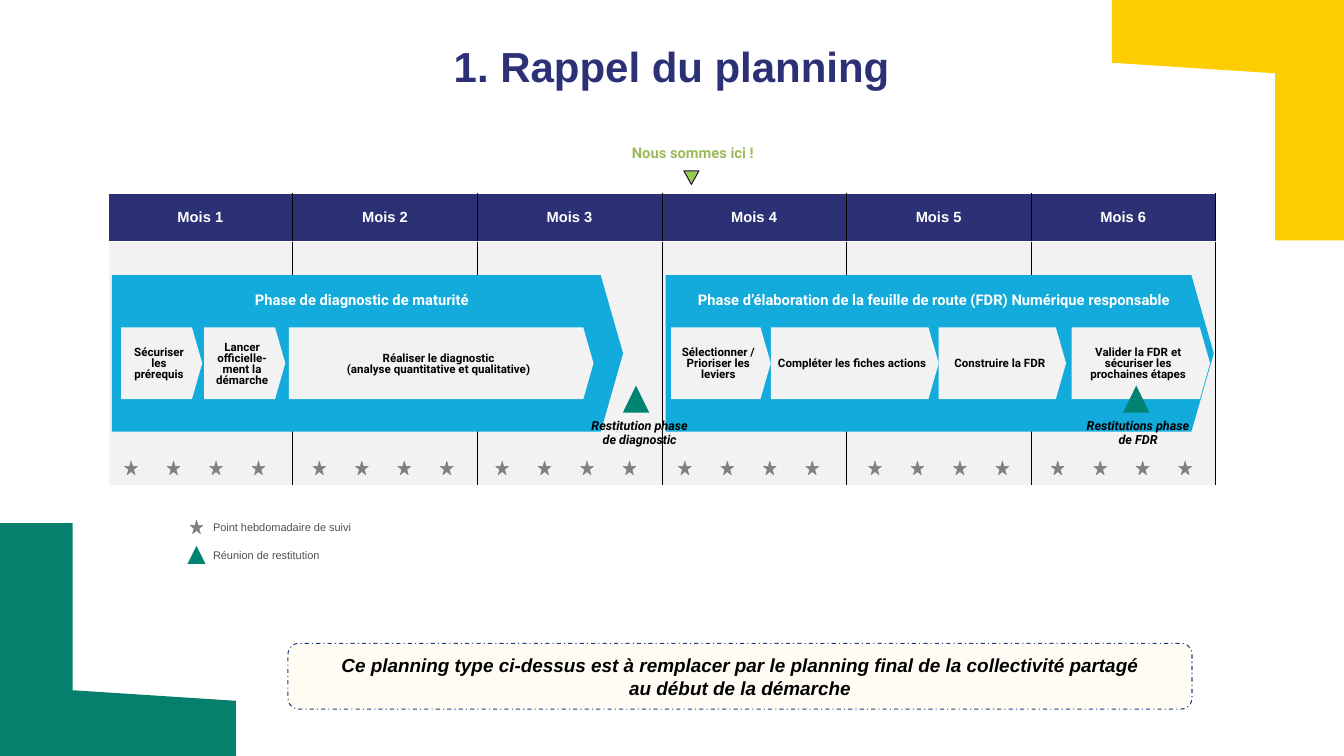
"""Build the planning slide: six months, two phases, weekly points and feedback meetings."""
from lxml.etree import SubElement
from pptx import Presentation
from pptx.dml.color import RGBColor
from pptx.enum.dml import MSO_LINE
from pptx.enum.shapes import MSO_SHAPE as Shp
from pptx.enum.text import MSO_ANCHOR as Anchor, PP_ALIGN as Align
from pptx.oxml.ns import qn
from pptx.util import Inches, Pt

W, H = 17.78, 10
LEFT, TOP, MONTH = 1.43, 2.56, 2.442
HEAD_H, BODY_H = 0.63, 3.23
NAVY, BLUE, GREEN, GREY, PALE = "2C3176", "12ABDB", "008373", "808080", "F2F2F2"
WHITE, BLACK = "FFFFFF", "000000"

TITLE = "1. Rappel du planning"
HERE, HERE_AT = "Nous sommes ici !", 3.16
MONTHS = [f"Mois {n}" for n in range(1, 7)]
PHASES = [
    ("Phase de diagnostic de maturité", 0.02, 2.77),
    ("Phase d’élaboration de la feuille de route (FDR) Numérique responsable", 3.02, 2.97),
]
STEPS = [
    (["Sécuriser les prérequis"], 0.07, 0.44),
    (["Lancer officielle-ment la démarche"], 0.52, 0.44),
    (["Réaliser le diagnostic", "(analyse quantitative et qualitative)"], 0.98, 1.65),
    (["Sélectionner / Prioriser les leviers"], 3.05, 0.54),
    (["Compléter les fiches actions"], 3.59, 0.91),
    (["Construire la FDR"], 4.5, 0.69),
    (["Valider la FDR et sécuriser les prochaines étapes"], 5.22, 0.75),
]
MEETINGS = [
    (["Restitution phase", "de diagnostic"], 2.86, 2.88),
    (["Restitutions phase", "de FDR"], 5.57, 5.58),
]
WEEK_STARTS, WEEK = [0.09, 1.11, 2.1, 3.09, 4.12, 5.11], 0.23
LEGEND = [
    ("Point hebdomadaire de suivi", Shp.STAR_5_POINT, GREY, 0.17, 0.18, 6.97),
    ("Réunion de restitution", Shp.ISOSCELES_TRIANGLE, GREEN, 0.24, 0.24, 7.34),
]
NOTE = ["Ce planning type ci-dessus est à remplacer par le planning final de la collectivité partagé",
        "au début de la démarche"]
CORNERS = [
    ("FCCD00", [(W, 0), (14.71, 0), (14.71, 0.83), (16.87, 0.97), (16.87, 3.18), (W, 3.18)]),
    ("06806C", [(0.96, 6.92), (0, 6.92), (0, H), (3.12, H), (3.12, 9.27), (0.96, 9.13)]),
]


def rgb(color):
    """Turn a hex string into a colour."""
    return RGBColor.from_string(color)


def month_x(m):
    """Return the horizontal place of a point given in months."""
    return LEFT + m * MONTH


def paint(s, fill, line=None, width=0.5):
    """Give a shape its fill and outline, without shadow."""
    s.shadow.inherit = False
    s.fill.solid()
    s.fill.fore_color.rgb = rgb(fill)
    if line:
        s.line.color.rgb = rgb(line)
        s.line.width = Pt(width)
    else:
        s.line.fill.background()
    return s


def add_shape(slide, kind, x, y, w, h, fill, line=None, width=0.5):
    """Add a painted preset shape."""
    s = slide.shapes.add_shape(kind, Inches(x), Inches(y), Inches(w), Inches(h))
    return paint(s, fill, line, width)


def add_outline(slide, points, fill, line=None, width=0.5):
    """Add a painted closed polygon."""
    pts = [(Inches(x), Inches(y)) for x, y in points]
    builder = slide.shapes.build_freeform(*pts[0])
    builder.add_line_segments(pts[1:], close=True)
    return paint(builder.convert_to_shape(), fill, line, width)


def write(tf, lines, size, color, font="Roboto", bold=True, italic=False,
          align=Align.CENTER, spacing=None, anchor=Anchor.MIDDLE, insets=None):
    """Write one paragraph per line into a text frame."""
    tf.word_wrap = True
    tf.vertical_anchor = anchor
    if insets:
        tf.margin_left, tf.margin_top, tf.margin_right, tf.margin_bottom = map(Inches, insets)
    for i, line in enumerate(lines):
        p = tf.add_paragraph() if i else tf.paragraphs[0]
        p.alignment = align
        if spacing:
            p.line_spacing = spacing
        r = p.add_run()
        r.text = line
        f = r.font
        f.name, f.size, f.bold, f.italic = font, Pt(size), bold, italic
        f.color.rgb = rgb(color)


def add_text(slide, x, y, w, h, *args, **kwargs):
    """Add a top-anchored text box."""
    box = slide.shapes.add_textbox(Inches(x), Inches(y), Inches(w), Inches(h))
    write(box.text_frame, *args, anchor=Anchor.TOP, **kwargs)


def add_border(cell, side, color, width):
    """Draw one side of a table cell."""
    ln = SubElement(cell._tc.get_or_add_tcPr(), qn(f"a:ln{side}"), w=str(Pt(width)))
    SubElement(SubElement(ln, qn("a:solidFill")), qn("a:srgbClr"), val=color)


def add_calendar(slide):
    """Add the table of months."""
    table = slide.shapes.add_table(2, len(MONTHS), Inches(LEFT), Inches(TOP),
                                   Inches(MONTH * len(MONTHS)), Inches(HEAD_H + BODY_H)).table
    table.rows[0].height, table.rows[1].height = Inches(HEAD_H), Inches(BODY_H)
    for c, month in enumerate(MONTHS):
        table.columns[c].width = Inches(MONTH)
        for r, fill in enumerate((NAVY, PALE)):
            cell = table.cell(r, c)
            if c:
                add_border(cell, "L", BLACK, 0.5)
            add_border(cell, "R", BLACK, 0.5)
            add_border(cell, "T", WHITE, 1)
            add_border(cell, "B", WHITE, 1)
            cell.fill.solid()
            cell.fill.fore_color.rgb = rgb(fill)
        head = table.cell(0, c)
        head.margin_left = head.margin_right = head.margin_top = Inches(0.01)
        head.margin_bottom = 0
        write(head.text_frame, [month], 14, WHITE, "Arial")
        head.vertical_anchor = Anchor.MIDDLE


def add_plate(slide, m, y, months, h, fill):
    """Add an arrow-ended bar placed in months."""
    s = add_shape(slide, Shp.PENTAGON, month_x(m), y, months * MONTH, h, fill)
    s.adjustments[0] = 0.143
    return s.text_frame


def main():
    """Build and save the slide."""
    prs = Presentation()
    prs.slide_width, prs.slide_height = Inches(W), Inches(H)
    slide = prs.slides.add_slide(prs.slide_layouts[5])
    for color, points in CORNERS:
        add_outline(slide, points, color)

    title = slide.shapes.title
    title.left, title.top, title.width, title.height = map(Inches, (1.09, 0.52, 15.59, 0.69))
    write(title.text_frame, [TITLE], 40, NAVY, "Arial", insets=(0, 0.02, 0, 0))

    note = add_shape(slide, Shp.ROUNDED_RECTANGLE, 3.81, 8.51, 11.96, 0.87, "FFFDF3", "274084", 1)
    note.line.dash_style = MSO_LINE.DASH_DOT
    write(note.text_frame, NOTE, 18, BLACK, "Arial", italic=True)

    add_calendar(slide)
    for text, m, months in PHASES:
        write(add_plate(slide, m, 3.64, months, 2.07, BLUE), [text], 14, WHITE,
              spacing=0.8, anchor=Anchor.TOP, insets=(0.06, 0.25, 0.06, 0.03))
    for lines, m, months in STEPS:
        write(add_plate(slide, m, 4.33, months, 0.95, PALE), lines, 11, BLACK,
              spacing=0.8, insets=(0.06, 0.06, 0.06, 0.03))
    for start in WEEK_STARTS:
        for week in range(4):
            add_shape(slide, Shp.STAR_5_POINT, month_x(start + week * WEEK), 6.1, 0.17, 0.18, GREY, GREY)
    for lines, mark, label in MEETINGS:
        add_shape(slide, Shp.ISOSCELES_TRIANGLE, month_x(mark) - 0.175, 5.1, 0.35, 0.36, GREEN)
        add_text(slide, month_x(label) - 1, 5.55, 2, 0.44, lines, 12, BLACK,
                 italic=True, spacing=0.9, insets=(0, 0, 0, 0))

    for text, kind, color, w, h, y in LEGEND:
        add_shape(slide, kind, 2.6 - w / 2, y - h / 2, w, h, color, color if color == GREY else None)
        add_text(slide, 2.72, y - 0.14, 2.4, 0.28, [text], 10.5, "4D4F53", "Arial",
                 bold=False, align=Align.LEFT)

    x = month_x(HERE_AT)
    add_outline(slide, [(x + 0.1, 2.26), (x, 2.44), (x - 0.1, 2.26)], "92D050", "2A0A3D", 0.96)
    add_text(slide, 8.26, 1.85, 2.08, 0.34, [HERE], 14, "9BBB59", align=Align.LEFT)
    prs.save("out.pptx")


if __name__ == "__main__":
    main()
